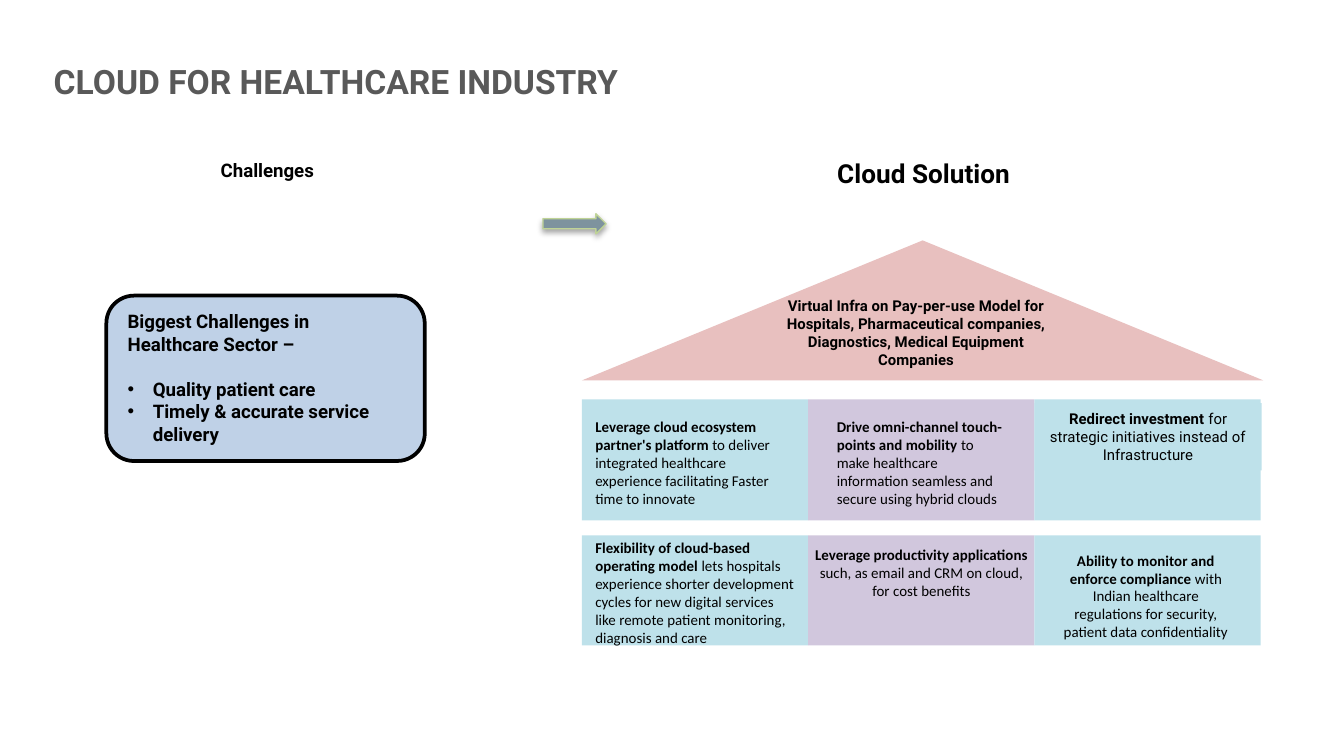
from lxml import etree
from pptx import Presentation
from pptx.dml.color import RGBColor
from pptx.enum.shapes import MSO_SHAPE
from pptx.enum.text import MSO_ANCHOR, PP_ALIGN
from pptx.oxml.ns import qn
from pptx.util import Pt

LEFT, CENTER = PP_ALIGN.LEFT, PP_ALIGN.CENTER
TOP, MIDDLE = MSO_ANCHOR.TOP, MSO_ANCHOR.MIDDLE
RECTANGLE = MSO_SHAPE.RECTANGLE
ROUNDED = MSO_SHAPE.ROUNDED_RECTANGLE
TRIANGLE = MSO_SHAPE.ISOSCELES_TRIANGLE
ARROW = MSO_SHAPE.RIGHT_ARROW

COLORS = {
    "text": "000000", "title": "595959", "challenge": "BFD1E7",
    "roof": "E8C0BF", "teal": "BEE1EA", "lilac": "D1C7DD",
    "arrow": "7E939E", "arrow_line": "BFD396",
}

# Each cell: colour, font, alignment, label offset and width, bold text, plain text
ROWS = [
    (214, 64.8, [
        ("teal", "Calibri", LEFT, (0, 6.3, 121),
         "Leverage cloud ecosystem partner's platform ",
         "to deliver integrated healthcare experience facilitating Faster time to innovate"),
        ("lilac", "Calibri", LEFT, (8.2, 6.3, 105),
         "Drive omni-channel touch-points and mobility ",
         "to make healthcare information seamless and secure using hybrid clouds"),
        ("teal", "Roboto", CENTER, (0, 2, 121.7),
         "Redirect investment ",
         "for strategic initiatives instead of Infrastructure"),
    ]),
    (286.8, 59, [
        ("teal", "Calibri", LEFT, (0, -1.6, 121),
         "Flexibility of cloud-based operating model ",
         "lets hospitals experience shorter development cycles for new digital "
         "services like remote patient monitoring, diagnosis and care"),
        ("lilac", "Calibri", CENTER, (-4.8, 2, 131),
         "Leverage productivity applications ",
         "such, as email and CRM on cloud, for cost benefits"),
        ("teal", "Calibri", CENTER, (7.2, 5, 105),
         "Ability to monitor and enforce compliance ",
         "with Indian healthcare regulations for security, patient data confidentiality"),
    ]),
]


def rgb(name):
    return RGBColor.from_string(COLORS[name])


def add_shape(slide, kind, box, fill, line=None, line_width=1):
    shape = slide.shapes.add_shape(kind, *map(Pt, box))
    shape.shadow.inherit = False
    shape.fill.solid()
    shape.fill.fore_color.rgb = rgb(fill)
    if line:
        shape.line.color.rgb = rgb(line)
        shape.line.width = Pt(line_width)
    else:
        shape.line.fill.background()
    return shape


def add_bullet(paragraph, indent):
    properties = paragraph._p.get_or_add_pPr()
    properties.set("marL", str(Pt(indent)))
    properties.set("indent", str(-Pt(indent)))
    font = etree.SubElement(properties, qn("a:buFont"))
    font.set("typeface", "Arial")
    etree.SubElement(properties, qn("a:buChar")).set("char", "•")


def write_text(shape, paragraphs, size=8, font="Roboto", color="text", align=LEFT,
               anchor=TOP, wrap=True, left_inset=7.2, bullets_from=None, gap=0):
    """Fill a shape with paragraphs, each a list of (text, bold) runs."""
    frame = shape.text_frame
    frame.word_wrap = wrap
    frame.vertical_anchor = anchor
    frame.margin_left = Pt(left_inset)
    for index, runs in enumerate(paragraphs):
        paragraph = frame.paragraphs[0] if index == 0 else frame.add_paragraph()
        paragraph.alignment = align
        if index == bullets_from:
            paragraph.space_before = Pt(gap)
        if bullets_from is not None and index >= bullets_from:
            add_bullet(paragraph, 13.5)
        for text, bold in runs:
            run = paragraph.add_run()
            run.text = text
            run.font.size = Pt(size)
            run.font.name = font
            run.font.bold = bold
            run.font.color.rgb = rgb(color)


def add_text(slide, box, paragraphs, **text_format):
    write_text(slide.shapes.add_textbox(*map(Pt, box)), paragraphs, **text_format)


def add_challenges(slide, box):
    left, top, width, height = box
    add_text(slide, (left + 53.8, top, 64.8, 19.4), [[("Challenges", True)]],
             size=10, align=CENTER, wrap=False)
    card = add_shape(slide, ROUNDED, (left, top + 77, width, height - 77),
                     "challenge", "text", 2)
    lines = ["Biggest Challenges in Healthcare Sector –", "Quality patient care",
             "Timely & accurate service delivery"]
    write_text(card, [[(line, True)] for line in lines],
               size=10, bullets_from=1, gap=12)


def add_cell(slide, box, cell):
    color, font, align, (shift_x, shift_y, label_width), strong, plain = cell
    left, top, _, height = box
    add_shape(slide, RECTANGLE, box, color)
    label_box = (left + shift_x, top + shift_y, label_width, height - shift_y)
    if font == "Roboto":
        label = add_shape(slide, RECTANGLE, (*label_box[:3], 36), color)
    else:
        label = slide.shapes.add_textbox(*map(Pt, label_box))
    write_text(label, [[(strong, True), (plain, False)]], font=font, align=align)


def add_solution(slide, box):
    left, top, width, height = box
    add_text(slide, (left + 128, top, 110, 24.5), [[("Cloud Solution", True)]],
             size=14, align=CENTER, wrap=False)
    add_shape(slide, TRIANGLE, (left, top + 48.2, width, 75), "roof")
    add_text(slide, (left + 98, top + 75, 162, 55.4),
             [[("Virtual Infra on Pay-per-use Model for Hospitals, Pharmaceutical "
                "companies, Diagnostics, Medical Equipment Companies", True)]],
             align=CENTER)
    cell_width = 121.2
    for row_top, row_height, cells in ROWS:
        for column, cell in enumerate(cells):
            add_cell(slide, (left + column * cell_width, row_top,
                             cell_width, row_height), cell)


def add_arrow(slide, box):
    arrow = add_shape(slide, ARROW, box, "arrow", "arrow_line", 0.75)
    effects = arrow._element.spPr.find(qn("a:effectLst"))
    shadow = etree.SubElement(effects, qn("a:outerShdw"), blurRad=str(Pt(3.1)),
                              dist=str(Pt(1.8)), dir="5400000", rotWithShape="0")
    color = etree.SubElement(shadow, qn("a:srgbClr"), val=COLORS["text"])
    etree.SubElement(color, qn("a:alpha"), val="35000")


def main():
    presentation = Presentation()
    presentation.slide_width, presentation.slide_height = Pt(720), Pt(405)
    slide = presentation.slides.add_slide(presentation.slide_layouts[6])
    add_challenges(slide, (57, 81.4, 170.6, 165.6))
    add_solution(slide, (311.8, 80.6, 365, 265))
    add_arrow(slide, (290.9, 114.5, 33.8, 10.8))
    add_text(slide, (28.8, 28.8, 593, 28.8),
             [[("CLOUD FOR HEALTHCARE INDUSTRY", True)]],
             size=18, color="title", anchor=MIDDLE, left_inset=0)
    presentation.save("out.pptx")


if __name__ == "__main__":
    main()
